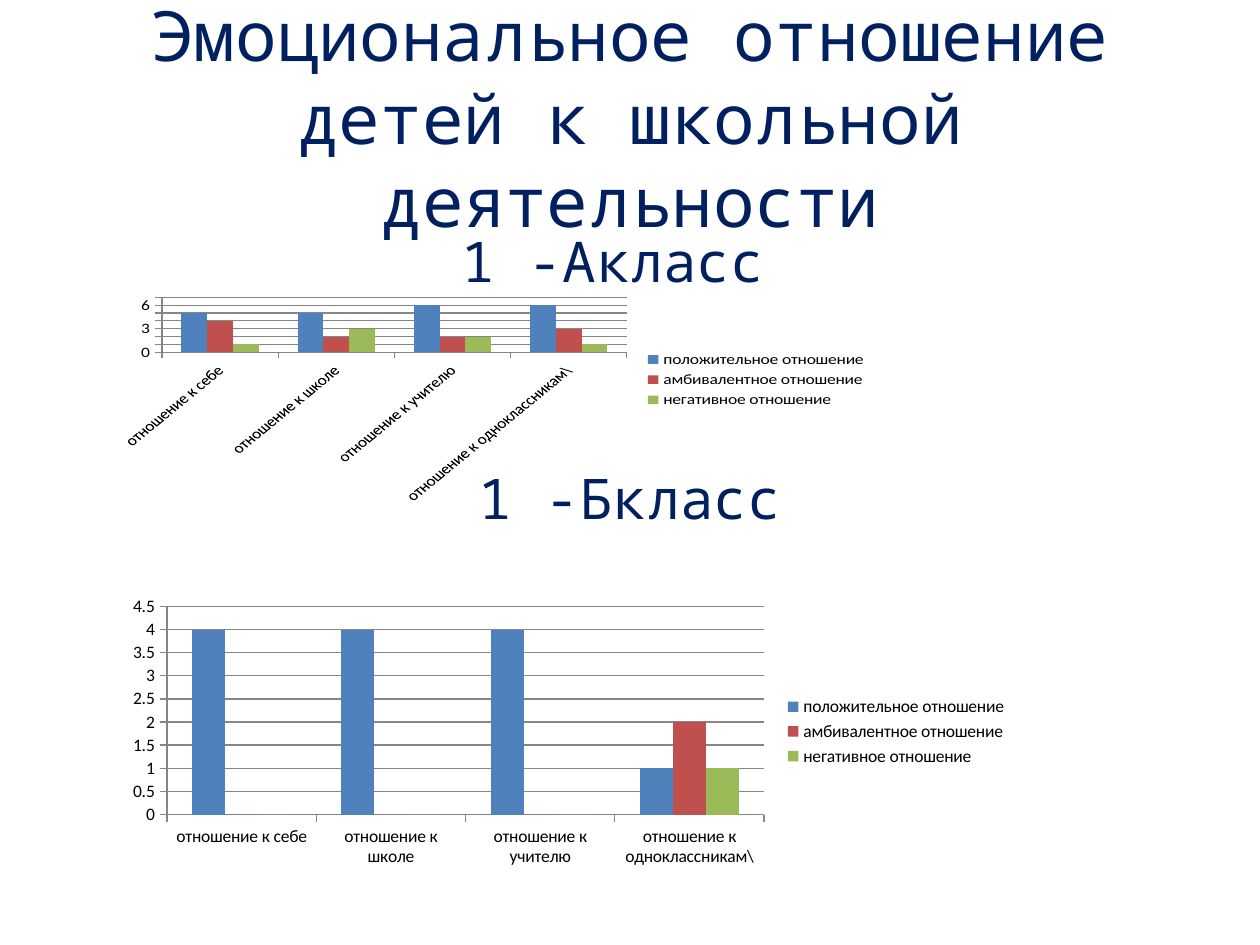
from pptx import Presentation
from pptx import util as u
from pptx.chart.data import CategoryChartData
from pptx.dml.color import RGBColor
from pptx.enum import chart as ch, text

SCALE = 914400 / 126
NAVY = "002060"
GRAY = "868686"
MONO = "Noto Sans Mono"
CATEGORIES = ["отношение к себе", "отношение к школе",
              "отношение к учителю", "отношение к одноклассникам\\"]
SERIES = [("положительное отношение", "4F81BD"),
          ("амбивалентное отношение", "C0504D"),
          ("негативное отношение", "9BBB59")]
CLASS_A = [(5, 5, 6, 6), (4, 2, 2, 3), (1, 3, 2, 1)]
CLASS_B = [(4, 4, 4, 1), (0, None, 0, 2), (0, 0, 0, 1)]


def px(*lengths):
    """Turn pixel lengths into EMU."""
    return [u.Emu(round(length * SCALE)) for length in lengths]


def rgb(color):
    """Turn a hex string into a colour."""
    return RGBColor.from_string(color)


def set_values(target, values):
    """Set each attribute of the target from a dict."""
    for name, value in values.items():
        setattr(target, name, value)


def set_font(font, name, size, color):
    """Give a font its face, size and colour."""
    set_values(font, {"name": name, "size": u.Pt(size)})
    font.color.rgb = rgb(color)


def write_centred(frame, lines, size):
    """Fill a text frame with centred navy paragraphs, given with their space before."""
    set_values(frame, {"word_wrap": True, "auto_size": text.MSO_AUTO_SIZE.NONE})
    for index, (line, gap) in enumerate(lines):
        para = frame.add_paragraph() if index else frame.paragraphs[0]
        set_values(para, {"alignment": text.PP_ALIGN.CENTER, "space_before": u.Pt(gap)})
        span = para.add_run()
        span.text = line
        set_font(span.font, MONO, size, NAVY)


def add_title(page, line):
    """Place and fill the title placeholder."""
    title = page.shapes.title
    set_values(title, dict(zip(("left", "top", "width", "height"), px(63, 38, 1134, 158))))
    title.text_frame.vertical_anchor = text.MSO_ANCHOR.MIDDLE
    write_centred(title.text_frame, [(line, 0)], 39.6)


def add_class_names(page, lines):
    """Add the box with the class headings."""
    box = page.shapes.add_textbox(*px(63, 220, 1134, 624))
    write_centred(box.text_frame, lines, 32)


def add_columns(page, place, rows, top, step, turn=None):
    """Add a clustered column chart with a legend on the right."""
    data = CategoryChartData()
    data.categories = CATEGORIES
    for (name, _), values in zip(SERIES, rows):
        data.add_series(name, values)
    chart = page.shapes.add_chart(
        ch.XL_CHART_TYPE.COLUMN_CLUSTERED, *px(*place), data).chart
    set_values(chart, {"has_title": False, "has_legend": True})
    set_font(chart.font, "Calibri", 10, "000000")
    set_values(chart.legend, {"position": ch.XL_LEGEND_POSITION.RIGHT,
                              "include_in_layout": False})
    plot = chart.plots[0]
    set_values(plot, {"gap_width": 150, "overlap": 0, "vary_by_categories": False})
    for series, (_, color) in zip(plot.series, SERIES):
        series.format.fill.solid()
        series.format.fill.fore_color.rgb = rgb(color)
        series.invert_if_negative = False
    for axis in (chart.category_axis, chart.value_axis):
        axis.major_tick_mark = ch.XL_TICK_MARK.OUTSIDE
        axis.format.line.color.rgb = rgb(GRAY)
        set_font(axis.tick_labels.font, "Calibri", 10, "000000")
    set_values(chart.value_axis, {"minimum_scale": 0, "maximum_scale": top,
                                  "major_unit": step, "has_major_gridlines": True})
    chart.value_axis.major_gridlines.format.line.color.rgb = rgb(GRAY)
    if turn:
        body = chart.category_axis._element.txPr.bodyPr
        body.set("rot", str(turn * 60000))
        body.set("vert", "horz")


def main():
    """Build the slide and save it."""
    deck = Presentation()
    set_values(deck, dict(zip(("slide_width", "slide_height"), px(1260, 945))))
    page = deck.slides.add_slide(deck.slide_layouts.get_by_name("Title Only"))
    add_title(page, "Эмоциональное отношение детей к школьной деятельности")
    add_class_names(page, [("1 -Акласс ", 0), ("1 -Бкласс", 97)])
    add_columns(page, (115, 591, 905, 281), CLASS_B, 4.5, 0.5)
    add_columns(page, (105, 294, 775, 210), CLASS_A, 7, 1, turn=-45)
    deck.save("out.pptx")


if __name__ == "__main__":
    main()
